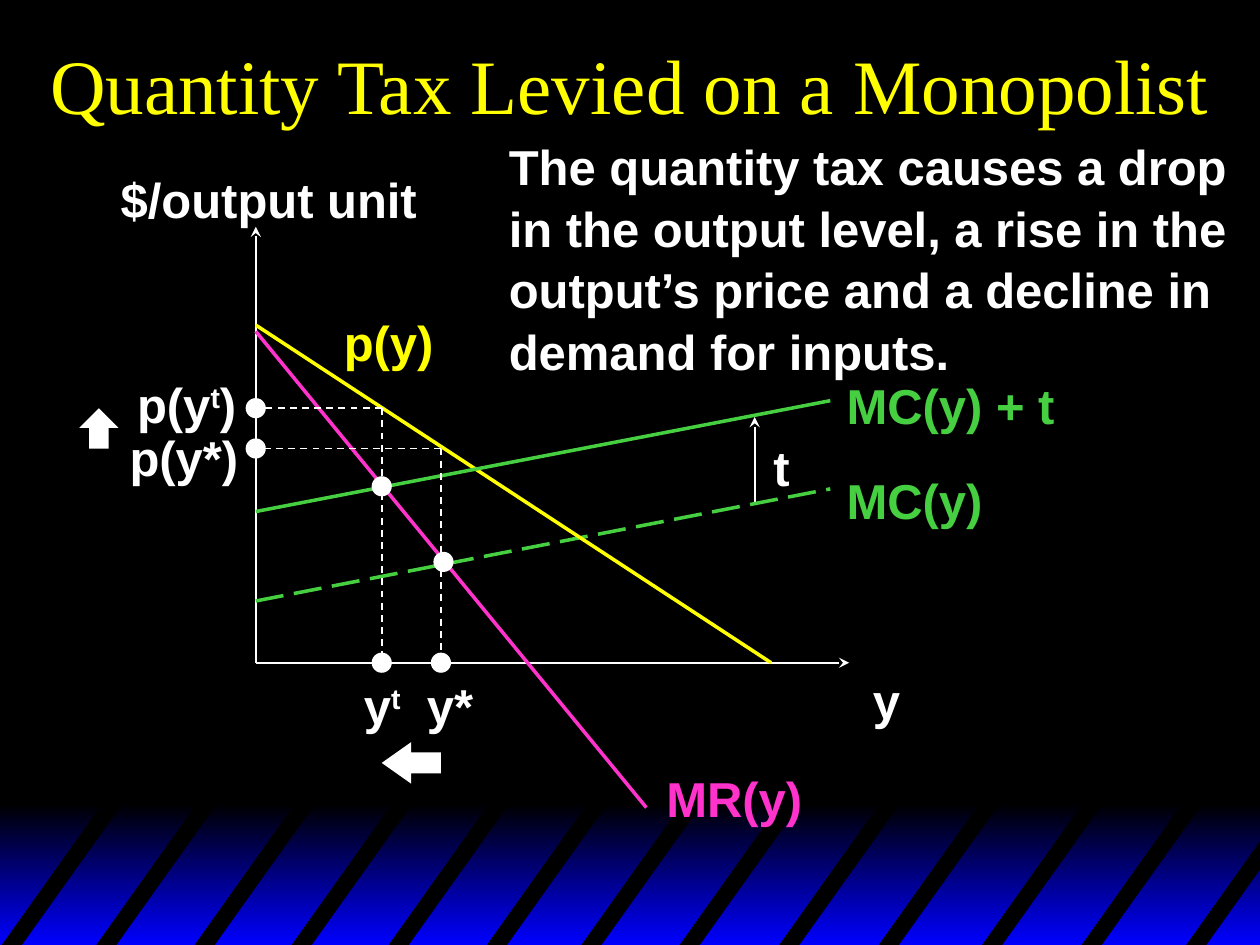
from dataclasses import dataclass

from lxml import etree
from pptx import Presentation
from pptx import util as u
from pptx.dml import color
from pptx.enum import dml, shapes, text
from pptx.oxml import ns

Inches = u.Inches


@dataclass(frozen=True)
class Theme:
    black: str = "000000"
    white: str = "FFFFFF"
    blue: str = "0000FF"
    yellow: str = "FFFF00"
    green: str = "46CF41"
    pink: str = "FF33CC"
    title_font: str = "Times New Roman"
    label_font: str = "Arial"
    title_size: int = 44
    label_size: int = 28
    thin: int = 1
    thick: int = 2
    line_spacing: float = 1.05


@dataclass(frozen=True)
class Box:
    left: float
    top: float
    width: float
    height: float

    def inches(self):
        return [Inches(v) for v in (self.left, self.top, self.width, self.height)]


THEME = Theme()


def rgb(value):
    return color.RGBColor.from_string(value)


def paint(shape, fill):
    shape.shadow.inherit = False
    shape.line.fill.background()
    shape.fill.solid()
    shape.fill.fore_color.rgb = rgb(fill)


def style_font(para, name, size, fill, bold=False):
    para.font.name, para.font.size, para.font.bold = name, u.Pt(size), bold
    para.font.color.rgb = rgb(fill)


def add_label(page, box, paragraphs, fill=THEME.white):
    """Each paragraph is a list of spans; every second span is superscript."""
    frame = page.shapes.add_textbox(*box.inches()).text_frame
    frame.word_wrap = False
    frame.auto_size = text.MSO_AUTO_SIZE.SHAPE_TO_FIT_TEXT
    for number, spans in enumerate(paragraphs):
        para = frame.add_paragraph() if number else frame.paragraphs[0]
        para.line_spacing = THEME.line_spacing
        style_font(para, THEME.label_font, THEME.label_size, fill, True)
        for index, words in enumerate(spans):
            for row, line in enumerate(words.split("\n")):
                if row:
                    para.add_line_break()
                span = para.add_run()
                span.text = line
                if index % 2:
                    span.font._element.set("baseline", "30000")


def add_line(page, start, end, fill, width, dash=None, arrow=False):
    """Draw a line, with an arrowhead at its end if asked for."""
    points = [Inches(v) for v in (*start, *end)]
    line = page.shapes.add_connector(shapes.MSO_CONNECTOR.STRAIGHT, *points)
    line.line.color.rgb = rgb(fill)
    line.line.width = u.Pt(width)
    if dash:
        line.line.dash_style = dash
    properties = line._element.spPr
    if arrow:
        outline = properties.find(ns.qn("a:ln"))
        etree.SubElement(outline, ns.qn("a:tailEnd"), type="stealth")
    etree.SubElement(properties, ns.qn("a:effectLst"))


def add_striped_band(page, box):
    # Gradient strip
    band = page.shapes.add_shape(shapes.MSO_SHAPE.RECTANGLE, *box.inches())
    paint(band, THEME.black)
    band.fill.gradient()
    band.fill.gradient_angle = 270
    for stop, fill in zip(band.fill.gradient_stops, (THEME.black, THEME.blue)):
        stop.color.rgb = rgb(fill)

    # Slanted stripes, the last one cut at the right edge
    top, bottom, right = box.top - 0.04, box.top + 1.14, box.left + box.width
    rise, lean, thickness = bottom - top, 0.84, 0.16
    starts = (0, 0.75, 1.53, 2.3, 3.07, 3.85, 4.6, 5.38, 6.17, 6.96, 7.78, 8.57, 9.4)
    for start in starts:
        left = box.left + start
        ends = [min(left + lean + extra, right) for extra in (0, thickness)]
        heights = [
            bottom - rise * (end - left - extra) / lean
            for end, extra in zip(ends, (0, thickness))
        ]
        corners = [(left, bottom), *zip(ends, heights), (left + thickness, bottom)]
        points = [(Inches(x), Inches(y)) for x, y in corners]
        builder = page.shapes.build_freeform(*points[0], scale=1.0)
        builder.add_line_segments(points[1:], close=True)
        paint(builder.convert_to_shape(), THEME.black)


def add_title(page, box, words):
    title = page.shapes.title
    title.left, title.top, title.width, title.height = box.inches()
    frame = title.text_frame
    frame.text = words
    frame.word_wrap = True
    frame.auto_size = text.MSO_AUTO_SIZE.NONE
    frame.vertical_anchor = text.MSO_ANCHOR.MIDDLE
    para = frame.paragraphs[0]
    para.alignment = text.PP_ALIGN.CENTER
    style_font(para, THEME.title_font, THEME.title_size, THEME.yellow)


def add_monopoly_graph(page, box):
    """Draw the graph; the box spans its axes, with y counted up from the origin."""

    def at(x, y):
        return box.left + x, box.top + box.height - y

    # Axes and the tax between both cost curves
    for start, end in (
        ((0, 0), (0, box.height)),
        ((0, 0), (box.width, 0)),
        ((3.96, 1.27), (3.96, 1.95)),
    ):
        add_line(page, at(*start), at(*end), THEME.white, THEME.thin, arrow=True)

    # Curves
    long_dash = dml.MSO_LINE.LONG_DASH
    for start, end, fill, dash in (
        ((0, 0.49), (4.56, 1.38), THEME.green, long_dash),
        ((0, 2.68), (4.09, 0), THEME.yellow, None),
        ((0, 2.63), (3.1, -1.15), THEME.pink, None),
        ((0, 1.2), (4.56, 2.08), THEME.green, None),
    ):
        add_line(page, at(*start), at(*end), fill, THEME.thick, dash)

    # Guides and dots for output and price, before and after the tax
    dot = 0.16
    for output, price, crossing in ((1.47, 1.7, (1.49, 0.8)), (1, 2.02, (1, 1.4))):
        for end in ((output, 0), (0, price)):
            add_line(page, at(output, price), at(*end), THEME.white, THEME.thin,
                     dml.MSO_LINE.DASH)
        for x, y in (crossing, (0, price), (output, 0)):
            spot = Box(*at(x - dot / 2, y + dot / 2), dot, dot)
            paint(page.shapes.add_shape(shapes.MSO_SHAPE.OVAL, *spot.inches()), THEME.white)

    # Labels
    for spans, x, y, width, fill in (
        (["$/output unit"], -1.17, 3.99, 2.56, THEME.white),
        (["y"], 4.8, 0.01, 0.42, THEME.white),
        (["MC(y)"], 4.59, 1.6, 1.28, THEME.green),
        (["p(y)"], 0.6, 2.85, 0.91, THEME.yellow),
        (["MR(y)"], 3.16, -0.77, 1.28, THEME.pink),
        (["MC(y) + t"], 4.59, 2.35, 1.85, THEME.green),
        (["t"], 4.01, 1.86, 0.33, THEME.white),
        (["y*"], 1.26, -0.03, 0.57, THEME.white),
        (["p(y*)"], -1.1, 1.94, 1.07, THEME.white),
        (["y", "t"], 0.76, -0.03, 0.51, THEME.white),
        (["p(y", "t", ")"], -1.04, 2.36, 1, THEME.white),
    ):
        add_label(page, Box(*at(x, y), width, 0.57), [spans], fill)

    # Block arrows: output falls, price rises
    for kind, x, y, width, height, head in (
        (shapes.MSO_SHAPE.LEFT_ARROW, 1, -0.63, 0.47, 0.33, 0.71),
        (shapes.MSO_SHAPE.UP_ARROW, -1.4, 2.02, 0.31, 0.32, 0.5),
    ):
        arrow = page.shapes.add_shape(kind, *Box(*at(x, y), width, height).inches())
        arrow.adjustments[1] = head
        paint(arrow, THEME.white)


def main():
    deck = Presentation()
    deck.slide_width, deck.slide_height = Inches(10), Inches(7.5)
    page = deck.slides.add_slide(deck.slide_layouts[5])
    page.background.fill.solid()
    page.background.fill.fore_color.rgb = rgb(THEME.black)

    add_striped_band(page, Box(0, 6.38, 10.02, 1.12))
    add_title(page, Box(0, 0, 10, 1.33), "Quantity Tax Levied on a Monopolist")
    add_monopoly_graph(page, Box(2.03, 1.8, 4.71, 3.46))
    add_label(page, Box(3.94, 1.01, 5.91, 1.97), [
        ["The quantity tax causes a drop\nin the output level, a rise in the\n"
         "output’s price and a decline in"],
        ["demand for inputs."],
    ])
    deck.save("out.pptx")


if __name__ == "__main__":
    main()
